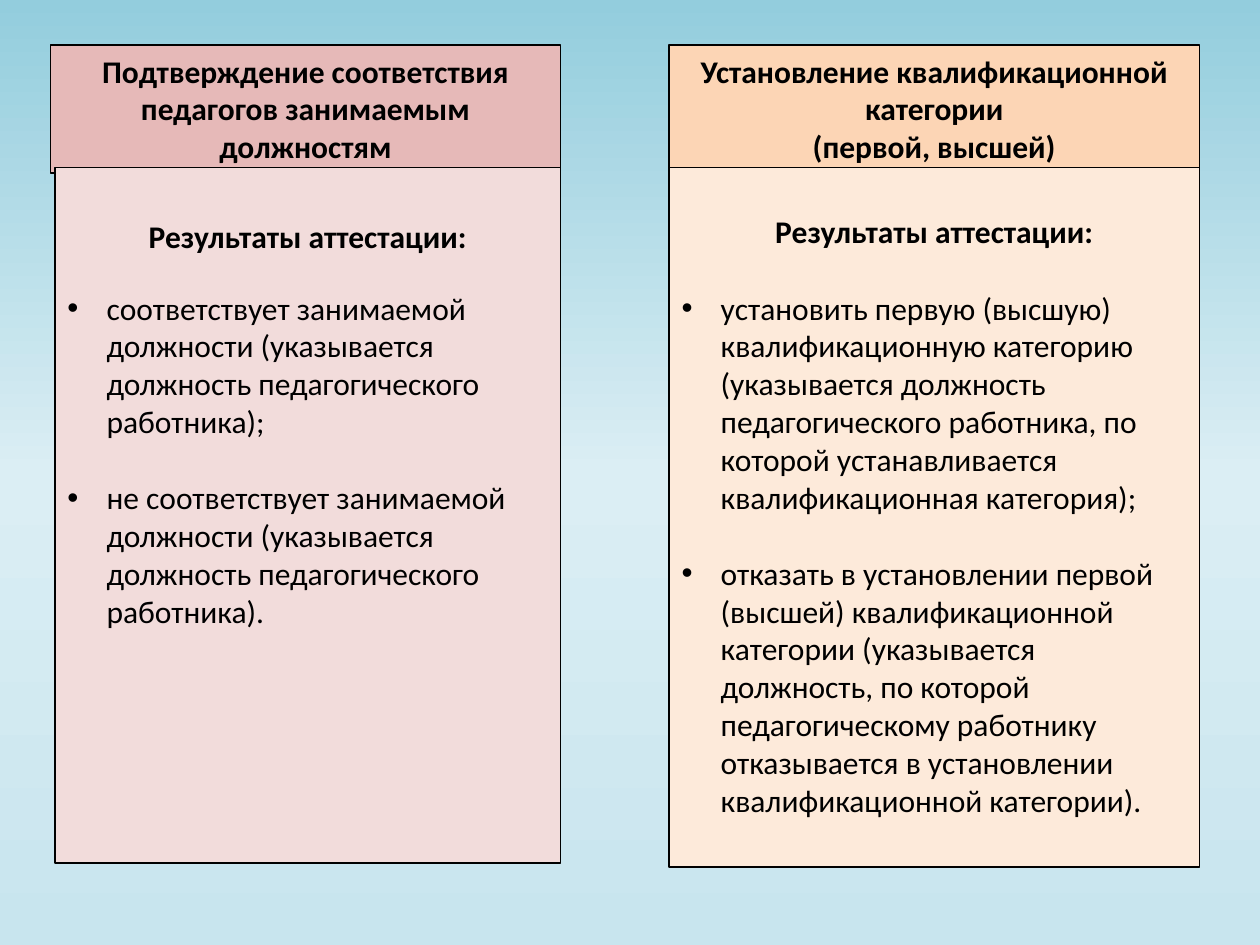
from copy import deepcopy
from dataclasses import dataclass

from lxml.etree import SubElement
from pptx import Presentation
from pptx.dml.color import RGBColor as RGB
from pptx.enum.shapes import MSO_SHAPE as Shape
from pptx.enum.text import MSO_ANCHOR as Anchor, PP_ALIGN as Align
from pptx.oxml.ns import qn
from pptx.util import Cm, Pt

COLORS = {
    "ink": "000000",
    "rose": "E6B9B8",
    "rose_pale": "F2DCDB",
    "peach": "FCD5B5",
    "peach_pale": "FDEADA",
}
BACKGROUND = [(0, "93CDDD"), (0.5, "DBEEF4"), (1, "C8E5EE")]

HEAD_TOP, HEAD_H = 0.91, 2.58
BODY_TOP = 3.38
INDENT = 0.79
LINE = 22  # height of one text line, in points
RESULTS = "Результаты аттестации:"


@dataclass
class Box:
    left: float
    top: float
    width: float
    height: float
    color: str
    inset: float = 0.13


@dataclass
class Column:
    head: Box
    title: list[str]
    body: Box
    title_gap: float
    results: list[str]


COLUMNS = [
    Column(
        Box(1.02, HEAD_TOP, 10.28, HEAD_H, "rose"),
        ["Подтверждение соответствия педагогов занимаемым должностям"],
        Box(1.11, BODY_TOP, 10.19, 14.02, "rose_pale", 0.99),
        19.5,
        [
            "соответствует занимаемой должности (указывается должность "
            "педагогического работника);",
            "не соответствует занимаемой должности (указывается должность "
            "педагогического работника).",
        ],
    ),
    Column(
        Box(13.49, HEAD_TOP, 10.69, HEAD_H, "peach"),
        ["Установление квалификационной категории", "(первой, высшей)"],
        Box(13.49, BODY_TOP, 10.69, 14.1, "peach_pale", 0.9),
        LINE,
        [
            "установить первую (высшую) квалификационную категорию "
            "(указывается должность педагогического работника, по которой "
            "устанавливается квалификационная категория);",
            "отказать в установлении первой (высшей) квалификационной "
            "категории (указывается должность, по которой педагогическому "
            "работнику отказывается в установлении квалификационной категории).",
        ],
    ),
]


def rgb(name: str) -> RGB:
    return RGB.from_string(COLORS[name])


def paint_background(slide) -> None:
    fill = slide.background.fill
    fill.gradient()
    fill.gradient_angle = 270
    stops = slide._element.find(".//" + qn("a:gsLst"))
    stops.append(deepcopy(stops[0]))
    for stop, (position, color) in zip(fill.gradient_stops, BACKGROUND):
        stop.position = position
        stop.color.rgb = RGB.from_string(color)


def add_box(slide, box: Box):
    """Draw an outlined rectangle and return its text frame."""
    sp = slide.shapes.add_shape(
        Shape.RECTANGLE, Cm(box.left), Cm(box.top), Cm(box.width), Cm(box.height)
    )
    sp.shadow.inherit = False
    sp.fill.solid()
    sp.fill.fore_color.rgb = rgb(box.color)
    sp.line.color.rgb = rgb("ink")
    sp.line.width = Pt(0.75)
    tf = sp.text_frame
    frame = {"word_wrap": True, "vertical_anchor": Anchor.TOP, "margin_top": Cm(box.inset)}
    for name, value in frame.items():
        setattr(tf, name, value)
    return tf


def add_text(tf, text: str, bold: bool, align: Align, gap: float = 0):
    """Write a paragraph, with gap points above it, into the frame."""
    p = tf.add_paragraph() if tf.text else tf.paragraphs[0]
    p.alignment = align
    p.space_before = Pt(gap)
    r = p.add_run()
    r.text = text
    for name, value in {"name": "Calibri", "size": Pt(18), "bold": bold}.items():
        setattr(r.font, name, value)
    r.font.color.rgb = rgb("ink")
    return p


def add_bullet(p) -> None:
    pPr = p._p.get_or_add_pPr()
    pPr.set("marL", str(Cm(INDENT)))
    pPr.set("indent", str(-Cm(INDENT)))
    SubElement(pPr, qn("a:buFont")).set("typeface", "Arial")
    SubElement(pPr, qn("a:buChar")).set("char", "•")


def main() -> None:
    prs = Presentation()
    prs.slide_width, prs.slide_height = Cm(25.4), Cm(19.05)
    slide = prs.slides.add_slide(prs.slide_layouts[6])
    paint_background(slide)
    for column in COLUMNS:
        tf = add_box(slide, column.head)
        for line in column.title:
            add_text(tf, line, True, Align.CENTER)
    for column in COLUMNS:
        tf = add_box(slide, column.body)
        add_text(tf, RESULTS, True, Align.CENTER)
        for i, result in enumerate(column.results):
            gap = LINE if i else column.title_gap
            add_bullet(add_text(tf, result, False, Align.LEFT, gap))
    prs.save("out.pptx")


if __name__ == "__main__":
    main()
